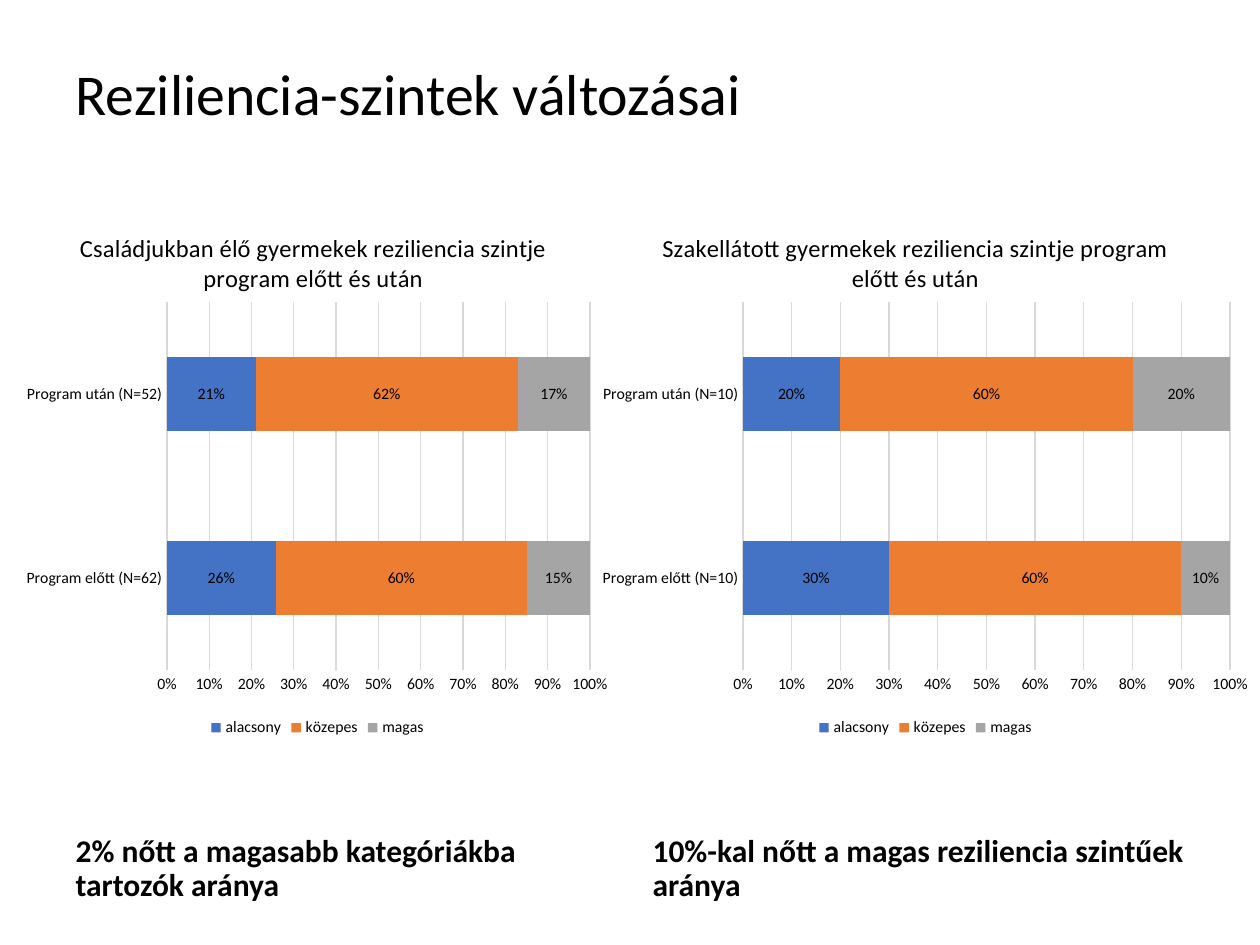
from dataclasses import dataclass

from lxml import etree
from pptx import Presentation
from pptx.chart.data import CategoryChartData
from pptx.dml.color import RGBColor
from pptx.enum.chart import XL_CHART_TYPE, XL_LEGEND_POSITION, XL_TICK_MARK
from pptx.enum.text import MSO_ANCHOR, MSO_AUTO_SIZE, PP_ALIGN
from pptx.oxml import parse_xml
from pptx.oxml.ns import nsdecls, qn
from pptx.util import Emu, Pt

STACKED_BAR = XL_CHART_TYPE.BAR_STACKED_100
LEGEND_BOTTOM = XL_LEGEND_POSITION.BOTTOM
NO_TICK = XL_TICK_MARK.NONE
MIDDLE, BOTTOM = MSO_ANCHOR.MIDDLE, MSO_ANCHOR.BOTTOM
NO_FIT = MSO_AUTO_SIZE.NONE
LEFT = PP_ALIGN.LEFT
PX = 914400 / 126
COMPARISON_LAYOUT = 4


@dataclass(frozen=True)
class Theme:
    font: str = "Calibri"
    text: RGBColor = RGBColor(0, 0, 0)
    grid: RGBColor = RGBColor(0xD9, 0xD9, 0xD9)
    levels: tuple = (
        ("alacsony", RGBColor(0x44, 0x72, 0xC4)),
        ("közepes", RGBColor(0xED, 0x7D, 0x31)),
        ("magas", RGBColor(0xA5, 0xA5, 0xA5)),
    )
    title: int = 33
    summary: int = 18
    chart_title: int = 14
    chart_text: int = 9
    hairline: float = 0.75


THEME = Theme()


def px(length):
    return Emu(round(length * PX))


def style_font(font, size, bold=False):
    font.name = THEME.font
    font.size = Pt(size)
    font.bold = bold
    font.color.rgb = THEME.text


def fill_placeholder(shape, box, text, size, anchor, bold=False, space_before=0):
    shape.left, shape.top, shape.width, shape.height = map(px, box)
    frame = shape.text_frame
    frame.text = text
    frame.word_wrap = True
    frame.auto_size = NO_FIT
    frame.vertical_anchor = anchor
    para = frame.paragraphs[0]
    para.alignment = LEFT
    para.line_spacing = 0.9
    para.space_before = Pt(space_before)
    style_font(para.font, size, bold)


def set_layout(parent, index, target=None, **fractions):
    for old in parent.findall(qn("c:layout")):
        parent.remove(old)
    layout = parse_xml(f"<c:layout {nsdecls('c')}><c:manualLayout/></c:layout>")
    settings = {"layoutTarget": target} if target else {}
    settings.update(xMode="edge", yMode="edge", **fractions)
    for name, value in settings.items():
        etree.SubElement(layout[0], qn(f"c:{name}"), val=str(value))
    parent.insert(index, layout)


def style_axes(chart):
    for axis in (chart.category_axis, chart.value_axis):
        axis.major_tick_mark = axis.minor_tick_mark = NO_TICK
        style_font(axis.tick_labels.font, THEME.chart_text)
    values = chart.value_axis
    values.minimum_scale, values.maximum_scale, values.major_unit = 0, 1, 0.1
    values.tick_labels.number_format = "0%"
    values.tick_labels.number_format_is_linked = False
    values.format.line.fill.background()
    values.has_major_gridlines = True
    for line in (chart.category_axis.format.line, values.major_gridlines.format.line):
        line.color.rgb = THEME.grid
        line.width = Pt(THEME.hairline)


def style_bars(plot):
    plot.gap_width, plot.overlap = 150, 100
    plot.vary_by_categories = False
    for series, (_, color) in zip(plot.series, THEME.levels):
        series.format.fill.solid()
        series.format.fill.fore_color.rgb = color
        labels = series.data_labels
        labels.show_value = True
        labels.number_format = "0%"
        labels.number_format_is_linked = False
        style_font(labels.font, THEME.chart_text)


def add_level_chart(page, box, title, categories, rows):
    data = CategoryChartData(number_format="0%")
    data.categories = categories
    for (name, _), values in zip(THEME.levels, rows):
        data.add_series(name, values)
    chart = page.shapes.add_chart(STACKED_BAR, *map(px, box), data).chart
    style_font(chart.font, THEME.chart_text)
    root = chart.element
    root.find(qn("c:chart")).addnext(parse_xml(
        f"<c:spPr {nsdecls('c', 'a')}><a:noFill/><a:ln><a:noFill/></a:ln></c:spPr>"))

    chart.has_title = True
    frame = chart.chart_title.text_frame
    frame.text = title
    style_font(frame.paragraphs[0].font, THEME.chart_title)
    chart.chart_title.include_in_layout = False
    set_layout(root.find(".//" + qn("c:title")), 1, x=0.1, y=0.05)

    chart.has_legend = True
    chart.legend.position = LEGEND_BOTTOM
    chart.legend.include_in_layout = False
    style_font(chart.legend.font, THEME.chart_text)

    style_axes(chart)
    style_bars(chart.plots[0])
    _, _, width, height = box
    left, top, right, bottom = 152, 103, 30, 72
    set_layout(root.find(".//" + qn("c:plotArea")), 0, "inner",
               x=round(left / width, 4), y=round(top / height, 4),
               w=round((width - left - right) / width, 4),
               h=round((height - top - bottom) / height, 4))


def add_group(page, summary, summary_left, summary_text, chart_box, title, categories, rows):
    fill_placeholder(summary, (summary_left, 746, 557, 164), summary_text,
                     THEME.summary, BOTTOM, bold=True, space_before=7.5)
    add_level_chart(page, chart_box, title, categories, rows)


def main():
    deck = Presentation()
    deck.slide_width, deck.slide_height = px(1260), px(945)
    page = deck.slides.add_slide(deck.slide_layouts[COMPARISON_LAYOUT])
    holders = {holder.placeholder_format.idx: holder for holder in page.placeholders}
    fill_placeholder(holders[0], (63, 38, 1134, 117), "Reziliencia-szintek változásai",
                     THEME.title, MIDDLE)
    add_group(page, holders[1], 63, "2% nőtt a magasabb kategóriákba tartozók aránya",
              (15, 199, 605, 543),
              "Családjukban élő gyermekek reziliencia szintje program előtt és után",
              ("Program előtt (N=62)", "Program után (N=52)"),
              ((0.26, 0.21), (0.6, 0.62), (0.15, 0.17)))
    add_group(page, holders[3], 640, "10%-kal nőtt a magas reziliencia szintűek aránya",
              (591, 199, 669, 543),
              "Szakellátott gyermekek reziliencia szintje program előtt és után",
              ("Program előtt (N=10)", "Program után (N=10)"),
              ((0.3, 0.2), (0.6, 0.6), (0.1, 0.2)))
    for index in (2, 4):
        element = holders[index].element
        element.getparent().remove(element)
    deck.save("out.pptx")


if __name__ == "__main__":
    main()
